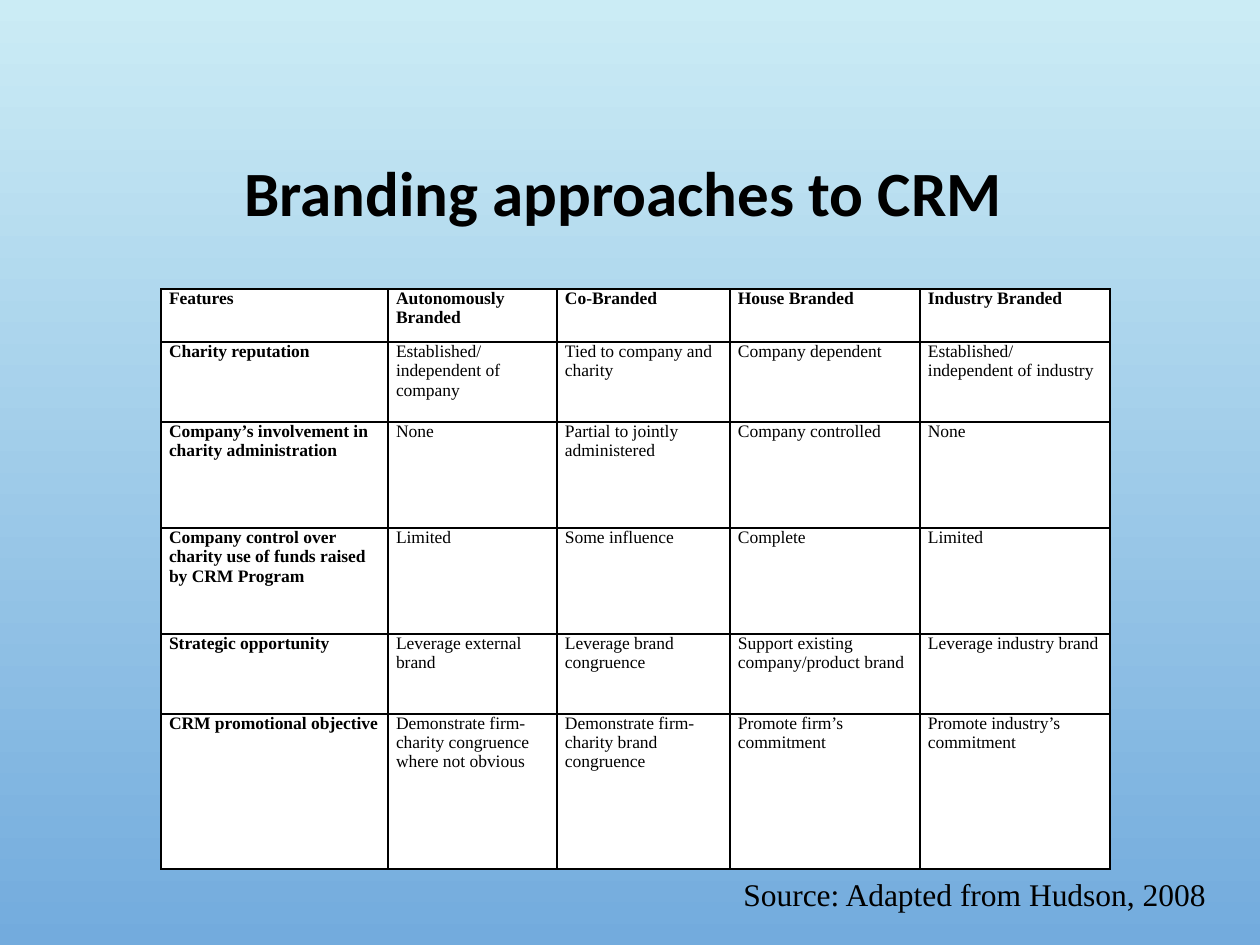
from lxml.etree import SubElement
from pptx import Presentation
from pptx.dml.color import RGBColor
from pptx.enum.text import MSO_ANCHOR as Anchor, MSO_AUTO_SIZE as AutoSize, PP_ALIGN as Align
from pptx.oxml.ns import qn
from pptx.util import Emu, Pt

EMU_PER_PX = 914400 / 126
COLORS = {"ink": "000000", "cell": "FFFFFF", "sky_top": "CBECF5", "sky_bottom": "73ABDD"}
HEAD_FONT, BODY_FONT = "Calibri", "Times New Roman"

COLUMN_WIDTHS = [227, 169, 173, 190, 190]
ROW_HEIGHTS = [53, 80, 106, 106, 80, 155]
APPROACHES = [
    ["Features", "Autonomously Branded", "Co-Branded", "House Branded", "Industry Branded"],
    ["Charity reputation", "Established/ independent of company", "Tied to company and charity",
     "Company dependent", "Established/ independent of industry"],
    ["Company’s involvement in charity administration", "None",
     "Partial to jointly administered", "Company controlled", "None"],
    ["Company control over charity use of funds raised by CRM Program", "Limited",
     "Some influence", "Complete", "Limited"],
    ["Strategic opportunity", "Leverage external brand", "Leverage brand congruence",
     "Support existing company/product brand", "Leverage industry brand"],
    ["CRM promotional objective", "Demonstrate firm-charity congruence where not obvious",
     "Demonstrate firm-charity brand congruence", "Promote firm’s commitment",
     "Promote industry’s commitment"],
]


def px(n):
    return Emu(round(n * EMU_PER_PX))


def rgb(name):
    return RGBColor.from_string(COLORS[name])


def write(tf, text, size, font=BODY_FONT, bold=False, align=Align.LEFT, spacing=None, after=None):
    """Fill the first paragraph of a text frame with one formatted run."""
    p = tf.paragraphs[0]
    p.alignment, p.line_spacing = align, spacing
    if after:
        p.space_after = Pt(after)
    r = p.add_run()
    r.text = text
    r.font.size, r.font.name, r.font.bold = Pt(size), font, bold
    r.font.color.rgb = rgb("ink")


def add_borders(cell, width=1):
    tc_pr = cell._tc.get_or_add_tcPr()
    for i, side in enumerate(("lnL", "lnR", "lnT", "lnB")):
        ln = SubElement(tc_pr, qn(f"a:{side}"), w=str(Pt(width)))
        fill = SubElement(ln, qn("a:solidFill"))
        SubElement(fill, qn("a:srgbClr"), val=COLORS["ink"])
        tc_pr.insert(i, ln)  # borders come before the cell fill


class SlideBuilder:
    """Holds the current slide and draws its elements in one style."""

    def __init__(self, prs):
        self.slide = prs.slides.add_slide(prs.slide_layouts[5])

    def background(self, top, bottom):
        fill = self.slide.background.fill
        fill.gradient()
        fill.gradient_angle = 270
        for stop, name in zip(fill.gradient_stops, (top, bottom)):
            stop.color.rgb = rgb(name)

    def title(self, text, x, y, w, h):
        sp = self.slide.shapes.title
        sp.left, sp.top, sp.width, sp.height = map(px, (x, y, w, h))
        tf = sp.text_frame
        tf.vertical_anchor = Anchor.MIDDLE
        write(tf, text, 36, font=HEAD_FONT, bold=True, align=Align.CENTER, spacing=0.9)

    def table(self, rows, x, y, widths, heights):
        table = self.slide.shapes.add_table(
            len(rows), len(widths), px(x), px(y), px(sum(widths)), px(sum(heights))).table
        table.horz_banding = False
        for col, w in zip(table.columns, widths):
            col.width = px(w)
        for i, (row, h) in enumerate(zip(rows, heights)):
            table.rows[i].height = px(h)
            for j, text in enumerate(row):
                self.cell(table.cell(i, j), text, bold=i == 0 or j == 0, after=12 if i else None)

    def cell(self, cell, text, **style):
        cell.margin_left = cell.margin_right = px(8)
        cell.margin_top = cell.margin_bottom = 0
        cell.fill.solid()
        cell.fill.fore_color.rgb = rgb("cell")
        add_borders(cell)
        write(cell.text_frame, text, 10, **style)

    def text(self, text, x, y, w, h, size):
        tf = self.slide.shapes.add_textbox(px(x), px(y), px(w), px(h)).text_frame
        tf.word_wrap = False
        tf.auto_size = AutoSize.SHAPE_TO_FIT_TEXT
        write(tf, text, size)


def main():
    prs = Presentation()
    prs.slide_width, prs.slide_height = px(1260), px(945)
    s = SlideBuilder(prs)
    s.background("sky_top", "sky_bottom")
    s.title("Branding approaches to CRM ", 95, 86, 1071, 220)
    s.table(APPROACHES, 161, 289, COLUMN_WIDTHS, ROW_HEIGHTS)
    s.text("Source: Adapted from Hudson, 2008", 731, 869, 501, 50, size=18)
    prs.save("out.pptx")


if __name__ == "__main__":
    main()
